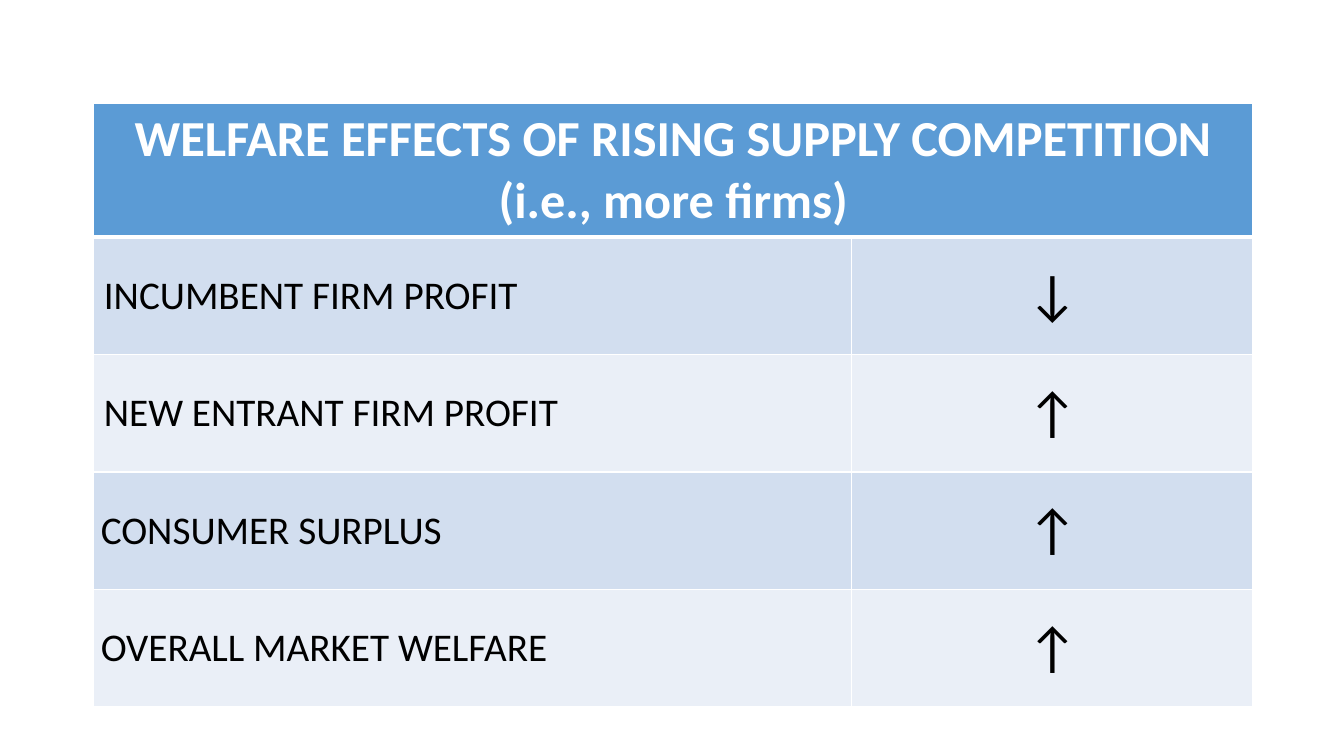
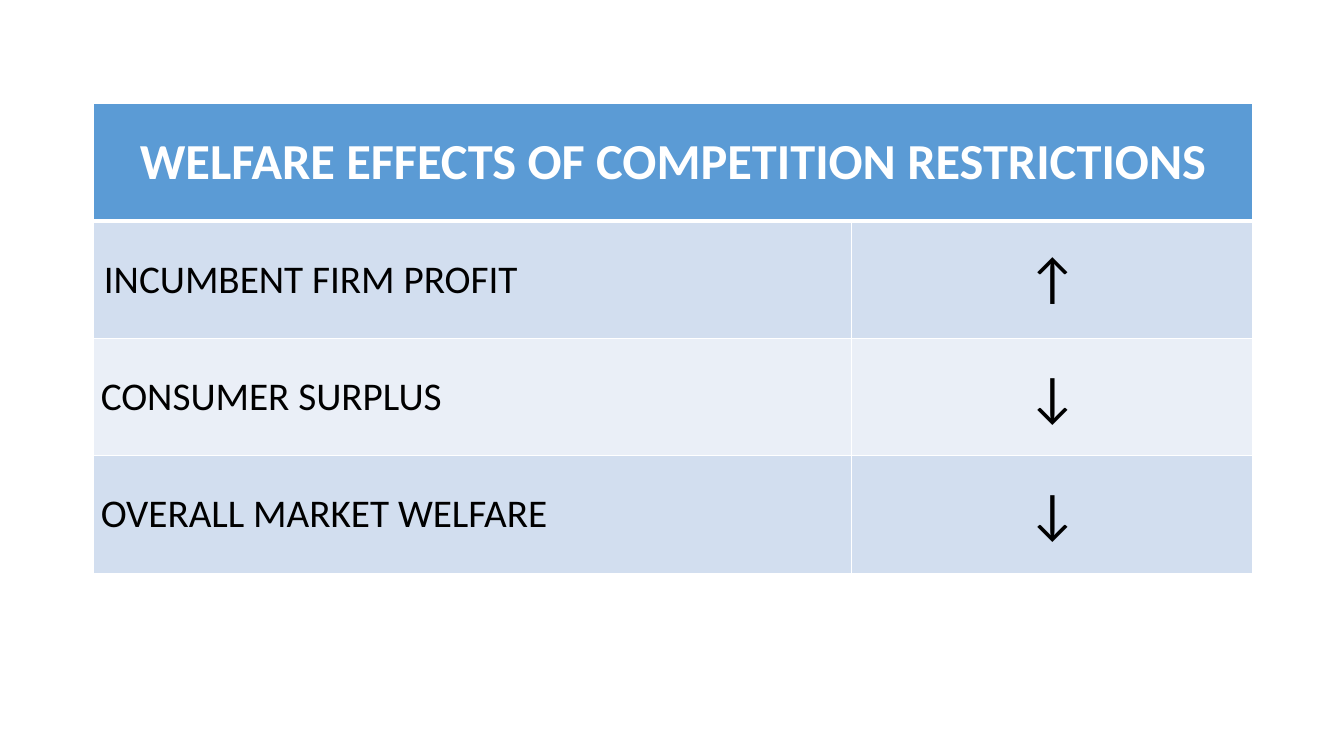
"""Build two slides of welfare effects tables."""
import dataclasses

import lxml.etree
import pptx
import pptx.dml.color
import pptx.enum.text
import pptx.oxml.ns
import pptx.presentation
import pptx.table
import pptx.util

Pt = pptx.util.Pt
ALIGN = pptx.enum.text.PP_ALIGN
COLORS = {
    "header": "5B9BD5",
    "band_dark": "D2DEEF",
    "band_light": "EAEFF7",
    "rule": "FFFFFF",
    "header_text": "FFFFFF",
    "body_text": "000000",
}
FONT = "Calibri"
TABLE_LEFT, TABLE_TOP = 67, 74
COLUMN_WIDTHS = (541.5, 286.5)
ROW_HEIGHT = 83.9
THIN_RULE, THICK_RULE = 1, 3
WIDE_INSET, NARROW_INSET = 7.2, 5


@dataclasses.dataclass(frozen=True)
class TextStyle:
    """Format of the text in one kind of cell."""

    size: float
    color: str
    bold: bool
    align: ALIGN


@dataclasses.dataclass(frozen=True)
class Effect:
    """One measure and the direction in which it moves."""

    measure: str
    arrow: str
    narrow: bool = False


@dataclasses.dataclass(frozen=True)
class EffectsTable:
    """Heading and rows of one slide's table."""

    heading: tuple[str, ...]
    effects: tuple[Effect, ...]
    header_height: float = ROW_HEIGHT


HEADING = TextStyle(36, "header_text", True, ALIGN.CENTER)
MEASURE = TextStyle(28, "body_text", False, ALIGN.LEFT)
ARROW = TextStyle(40, "body_text", False, ALIGN.CENTER)

TABLES = (
    EffectsTable(
        ("WELFARE EFFECTS OF RISING SUPPLY COMPETITION", "(i.e., more firms)"),
        (
            Effect("INCUMBENT FIRM PROFIT", "↓"),
            Effect("NEW ENTRANT FIRM PROFIT", "↑"),
            Effect("CONSUMER SURPLUS", "↑", narrow=True),
            Effect("OVERALL MARKET WELFARE", "↑", narrow=True),
        ),
        header_height=94,
    ),
    EffectsTable(
        ("WELFARE EFFECTS OF COMPETITION RESTRICTIONS",),
        (
            Effect("INCUMBENT FIRM PROFIT", "↑"),
            Effect("CONSUMER SURPLUS", "↓", narrow=True),
            Effect("OVERALL MARKET WELFARE", "↓", narrow=True),
        ),
    ),
)


def apply_format(target: object, values: dict[str, object]) -> None:
    """Set each named attribute of the target."""
    for name, value in values.items():
        setattr(target, name, value)


def rgb(name: str) -> pptx.dml.color.RGBColor:
    """Return a named colour."""
    return pptx.dml.color.RGBColor.from_string(COLORS[name])


def draw_borders(cell: pptx.table._Cell, top: float, bottom: float) -> None:
    """Rule all four sides of a cell."""
    qn = pptx.oxml.ns.qn
    properties = cell._tc.get_or_add_tcPr()
    widths = {"L": THIN_RULE, "R": THIN_RULE, "T": top, "B": bottom}
    for side, width in widths.items():
        line = lxml.etree.SubElement(properties, qn(f"a:ln{side}"), w=str(Pt(width)))
        fill = lxml.etree.SubElement(line, qn("a:solidFill"))
        lxml.etree.SubElement(fill, qn("a:srgbClr"), val=COLORS["rule"])


def style_cell(cell: pptx.table._Cell, row: int) -> None:
    """Give a cell the rules and fill of its row."""
    top = THICK_RULE if row == 1 else THIN_RULE
    bottom = THICK_RULE if row == 0 else THIN_RULE
    draw_borders(cell, top, bottom)
    band = "band_dark" if row % 2 else "band_light"
    cell.fill.solid()
    cell.fill.fore_color.rgb = rgb("header" if row == 0 else band)


def write_cell(cell: pptx.table._Cell, lines: tuple[str, ...],
               style: TextStyle, narrow: bool = False) -> None:
    """Write paragraphs into a cell in one style."""
    side = Pt(NARROW_INSET if narrow else WIDE_INSET)
    end = Pt(0 if narrow else 3.6)
    apply_format(cell, {
        "vertical_anchor": pptx.enum.text.MSO_ANCHOR.MIDDLE,
        "margin_left": side, "margin_right": side,
        "margin_top": end, "margin_bottom": end,
    })
    cell.text_frame.text = "\n".join(lines)
    for para in cell.text_frame.paragraphs:
        para.alignment = style.align
        for span in para.runs:
            apply_format(span.font, {
                "name": FONT, "size": Pt(style.size), "bold": style.bold,
            })
            span.font.color.rgb = rgb(style.color)


def add_effects_slide(deck: pptx.presentation.Presentation,
                      content: EffectsTable) -> None:
    """Add a slide holding one effects table."""
    page = deck.slides.add_slide(deck.slide_layouts.get_by_name("Blank"))
    heights = [content.header_height] + [ROW_HEIGHT] * len(content.effects)
    table = page.shapes.add_table(
        len(heights), len(COLUMN_WIDTHS), Pt(TABLE_LEFT), Pt(TABLE_TOP),
        Pt(sum(COLUMN_WIDTHS)), Pt(sum(heights)),
    ).table
    for column, width in zip(table.columns, COLUMN_WIDTHS):
        column.width = Pt(width)
    for index, (row, height) in enumerate(zip(table.rows, heights)):
        row.height = Pt(height)
        for cell in row.cells:
            style_cell(cell, index)
    table.cell(0, 0).merge(table.cell(0, 1))
    write_cell(table.cell(0, 0), content.heading, HEADING)
    for index, effect in enumerate(content.effects, start=1):
        write_cell(table.cell(index, 0), (effect.measure,), MEASURE, effect.narrow)
        write_cell(table.cell(index, 1), (effect.arrow,), ARROW)


def main() -> None:
    """Build and save the deck."""
    deck = pptx.Presentation()
    apply_format(deck, {"slide_width": Pt(960), "slide_height": Pt(540)})
    for content in TABLES:
        add_effects_slide(deck, content)
    deck.save("out.pptx")


if __name__ == "__main__":
    main()
